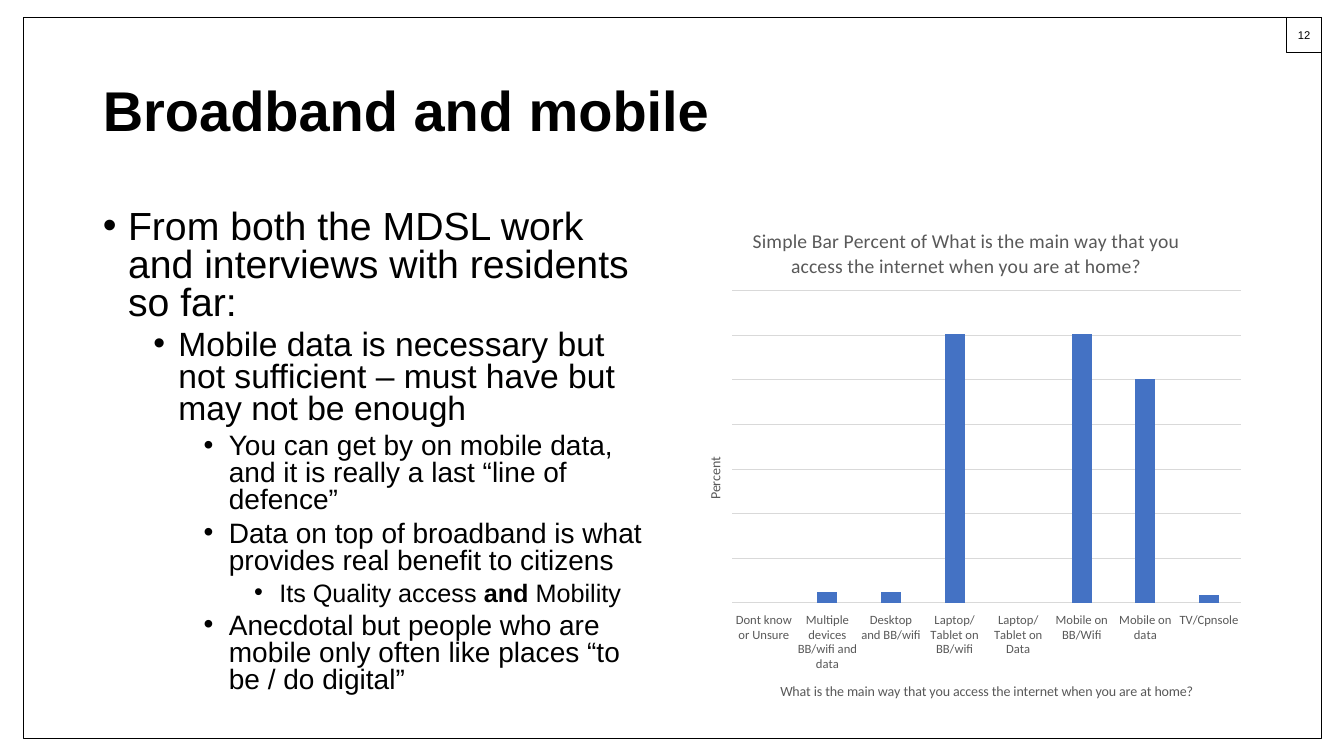
from lxml.etree import SubElement
from pptx import Presentation
from pptx.chart.data import CategoryChartData
from pptx.dml.color import RGBColor
from pptx.enum.chart import XL_CHART_TYPE, XL_TICK_LABEL_POSITION, XL_TICK_MARK
from pptx.enum.shapes import MSO_SHAPE
from pptx.enum.text import MSO_ANCHOR, MSO_AUTO_SIZE, PP_ALIGN
from pptx.oxml.ns import qn
from pptx.util import Inches, Pt

COLOURS = {"ink": "000000", "label": "595959", "grid": "D9D9D9", "bar": "4472C4"}
BULLET_SIZES = [28, 24, 20, 18]
FINDINGS = [
    (0, ["From both the MDSL work and interviews with residents so far:"]),
    (1, ["Mobile data is necessary but not sufficient – must have but may not be enough"]),
    (2, ["You can get by on mobile data, and it is really a last “line of defence”"]),
    (2, ["Data on top of broadband is what provides real benefit to citizens"]),
    (3, ["Its Quality access ", "and", " Mobility"]),
    (2, ["Anecdotal but people who are mobile only often like places “to be / do digital”"]),
]
ACCESS_SHARES = {
    "Dont know or Unsure": None,
    "Multiple devices BB/wifi and data": 4,
    "Desktop and BB/wifi": 4,
    "Laptop/Tablet on BB/wifi": 100,
    "Laptop/Tablet on Data": None,
    "Mobile on BB/Wifi": 100,
    "Mobile on data": 83,
    "TV/Cpnsole": 3,
}
QUESTION = "What is the main way that you access the internet when you are at home?"
AXIS_TOP, GRID_STEPS = 116, 7


def colour(name):
    """Return the named palette colour."""
    return RGBColor.from_string(COLOURS[name])


def apply_format(target, values):
    """Set each attribute of the target from a dict."""
    for attribute, value in values.items():
        setattr(target, attribute, value)


def style_font(font, size, ink="ink", face="Arial", bold=False):
    """Give a font its size, colour, face and weight."""
    apply_format(font, {"size": Pt(size), "name": face, "bold": bold})
    font.color.rgb = colour(ink)


def style_line(line, ink, width):
    """Give a line its colour and width."""
    line.color.rgb = colour(ink)
    line.width = Pt(width)


def place(part, box):
    """Move a part to a box given in inches."""
    names = ("left", "top", "width", "height")
    apply_format(part, dict(zip(names, map(Inches, box))))


def add_outline(slide, box):
    """Draw one unfilled black rectangle."""
    outline = slide.shapes.add_shape(MSO_SHAPE.RECTANGLE, *map(Inches, box))
    outline.shadow.inherit = False
    outline.fill.background()
    style_line(outline.line, "ink", 0.5)
    return outline


def add_frame(slide, box, number, corner=0.35):
    """Draw the slide frame with the page number in its top right corner."""
    left, top, width, _ = box
    add_outline(slide, box)
    page = add_outline(slide, (left + width - corner, top, corner, corner)).text_frame
    apply_format(page, {"text": number, "vertical_anchor": MSO_ANCHOR.MIDDLE, "word_wrap": False,
                        "margin_left": 0, "margin_right": 0})
    page.paragraphs[0].alignment = PP_ALIGN.CENTER
    style_font(page.paragraphs[0].runs[0].font, 8)


def fill_title(title, box, heading):
    """Place and write the slide title."""
    place(title, box)
    apply_format(title.text_frame, {"text": heading, "vertical_anchor": MSO_ANCHOR.MIDDLE,
                                    "auto_size": MSO_AUTO_SIZE.NONE})
    paragraph = title.text_frame.paragraphs[0]
    apply_format(paragraph, {"alignment": PP_ALIGN.LEFT, "line_spacing": 0.9})
    style_font(paragraph.runs[0].font, 40, bold=True)


def fill_findings(body, box):
    """Place the body and write its nested bullets."""
    place(body, box)
    frame = body.text_frame
    apply_format(frame, {"auto_size": MSO_AUTO_SIZE.NONE, "vertical_anchor": MSO_ANCHOR.TOP})
    for index, (level, pieces) in enumerate(FINDINGS):
        paragraph = frame.add_paragraph() if index else frame.paragraphs[0]
        apply_format(paragraph, {"level": level, "line_spacing": 0.8,
                                 "space_before": Pt(5 if level else 10)})
        properties = paragraph._p.get_or_add_pPr()
        properties.set("marL", str(Inches(0.25 + 0.5 * level)))
        properties.set("indent", str(Inches(-0.25)))
        SubElement(properties, qn("a:buFont")).set("typeface", "Arial")
        SubElement(properties, qn("a:buChar")).set("char", "•")
        for piece in pieces:
            run = paragraph.add_run()
            run.text = piece
            style_font(run.font, BULLET_SIZES[level], bold=piece == "and")


def set_layout(parent, **fractions):
    """Fix a chart part at fractions of the chart area."""
    layout = parent.find(qn("c:layout"))
    if layout is None:
        layout = parent.makeelement(qn("c:layout"))
        text = parent.find(qn("c:tx"))
        parent.insert(0 if text is None else 1, layout)
    manual = SubElement(layout, qn("c:manualLayout"))
    if "w" in fractions:
        SubElement(manual, qn("c:layoutTarget")).set("val", "inner")
    for side in "xy":
        SubElement(manual, qn(f"c:{side}Mode")).set("val", "edge")
    for side, fraction in fractions.items():
        SubElement(manual, qn(f"c:{side}")).set("val", str(fraction))


def write_chart_title(owner, wording, size, x, y):
    """Write a chart or axis title at a fixed place."""
    title = owner.chart_title if hasattr(owner, "chart_title") else owner.axis_title
    title.text_frame.text = wording
    style_font(title.text_frame.paragraphs[0].runs[0].font, size, "label", "Calibri")
    set_layout(title._element, x=x, y=y)


def add_access_chart(slide, box):
    """Draw the column chart of home internet access."""
    shares = CategoryChartData()
    shares.categories = list(ACCESS_SHARES)
    shares.add_series("Series 1", ACCESS_SHARES.values())
    chart = slide.shapes.add_chart(
        XL_CHART_TYPE.COLUMN_STACKED, *map(Inches, box), shares).chart
    chart.has_legend = False
    style_font(chart.font, 10, face="Calibri")
    plot = chart.plots[0]
    apply_format(plot, {"gap_width": 219, "overlap": 100, "vary_by_categories": False})
    bars = plot.series[0].format.fill
    bars.solid()
    bars.fore_color.rgb = colour("bar")
    devices, percent = chart.category_axis, chart.value_axis
    apply_format(devices, {"major_tick_mark": XL_TICK_MARK.NONE,
                           "tick_label_position": XL_TICK_LABEL_POSITION.LOW})
    style_font(devices.tick_labels.font, 9, "label", "Calibri")
    style_line(devices.format.line, "grid", 0.75)
    apply_format(percent, {"minimum_scale": 0, "maximum_scale": AXIS_TOP,
                           "major_unit": AXIS_TOP / GRID_STEPS,
                           "has_major_gridlines": True, "visible": False})
    style_line(percent.major_gridlines.format.line, "grid", 0.75)
    write_chart_title(chart, f"Simple Bar Percent of {QUESTION}", 14, 0.12, 0.04)
    write_chart_title(devices, QUESTION, 10, 0.17, 0.93)
    write_chart_title(percent, "Percent", 10, 0.04, 0.49)
    set_layout(chart._chartSpace.chart.plotArea, x=0.09, y=0.17, w=0.89, h=0.61)


def build_slide(deck):
    """Build the broadband and mobile slide."""
    slide = deck.slides.add_slide(deck.slide_layouts[1])
    add_frame(slide, (0.23, 0.17, 12.88, 7.16), "12")
    fill_title(slide.shapes.title, (0.92, 0.4, 11.5, 1.45), "Broadband and mobile")
    fill_findings(slide.placeholders[1], (0.92, 2.04, 5.64, 5.07))
    add_access_chart(slide, (6.75, 2.02, 5.67, 5.08))


def main():
    """Create and save the deck."""
    deck = Presentation()
    apply_format(deck, {"slide_width": Inches(13.33), "slide_height": Inches(7.5)})
    build_slide(deck)
    deck.save("out.pptx")


if __name__ == "__main__":
    main()
